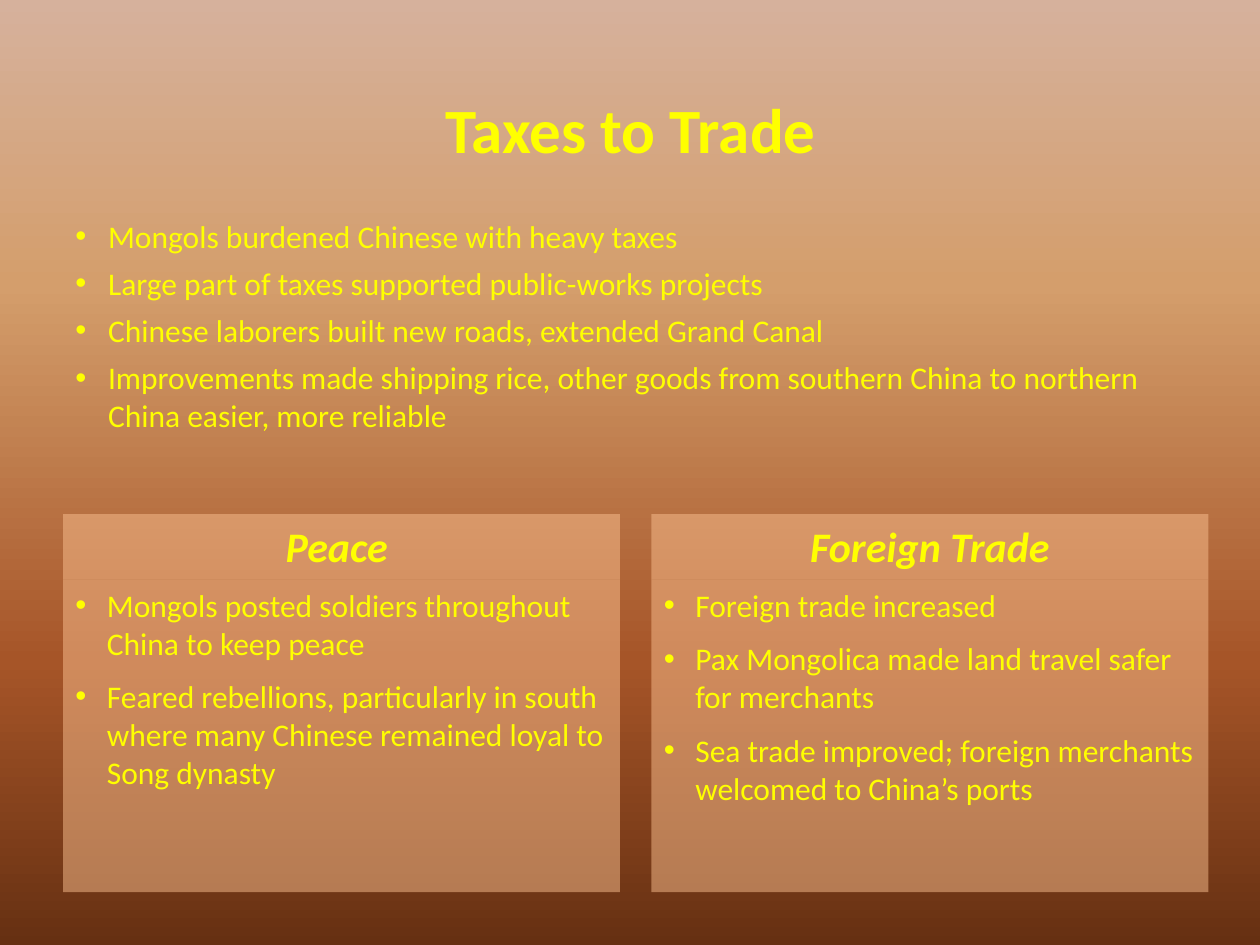
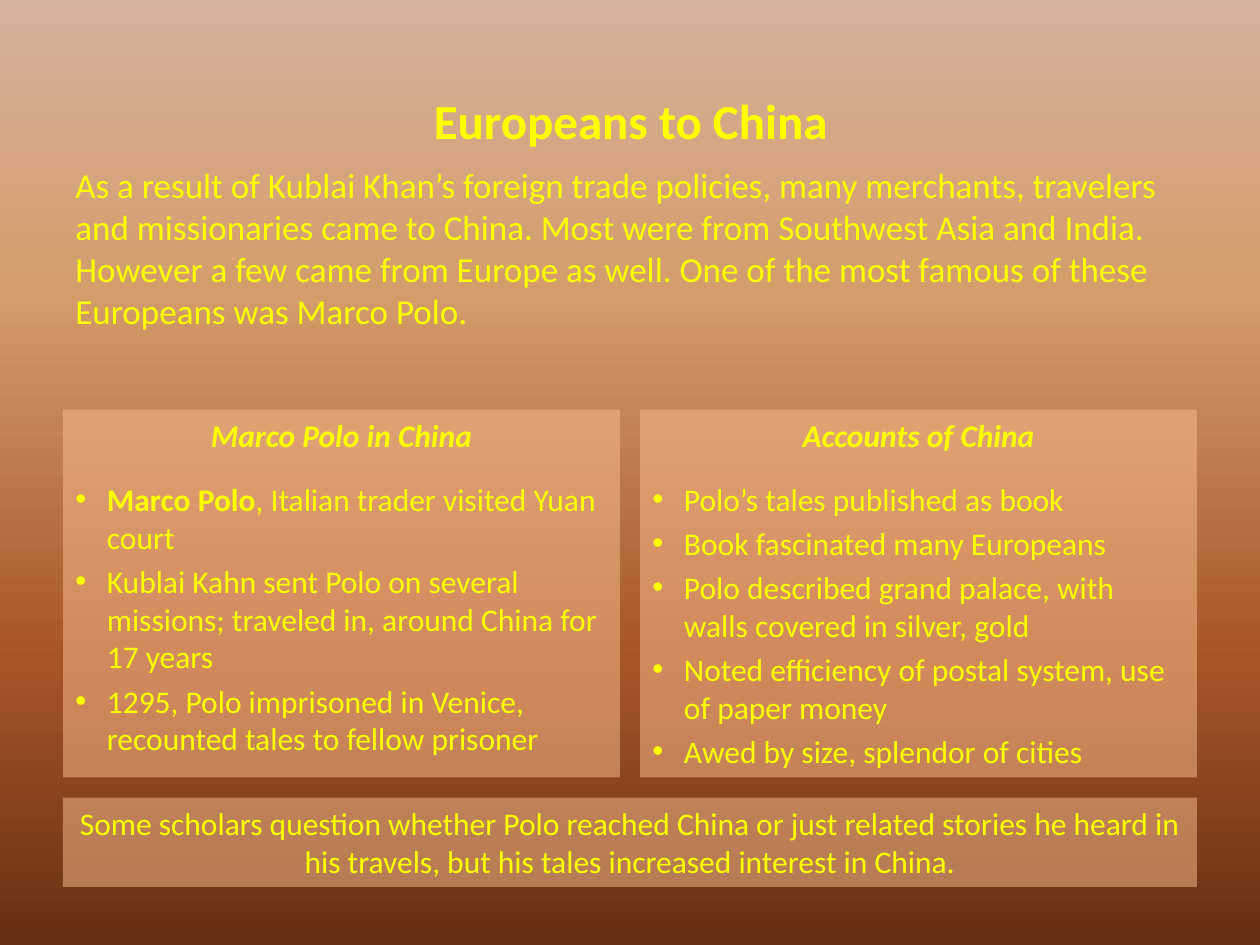
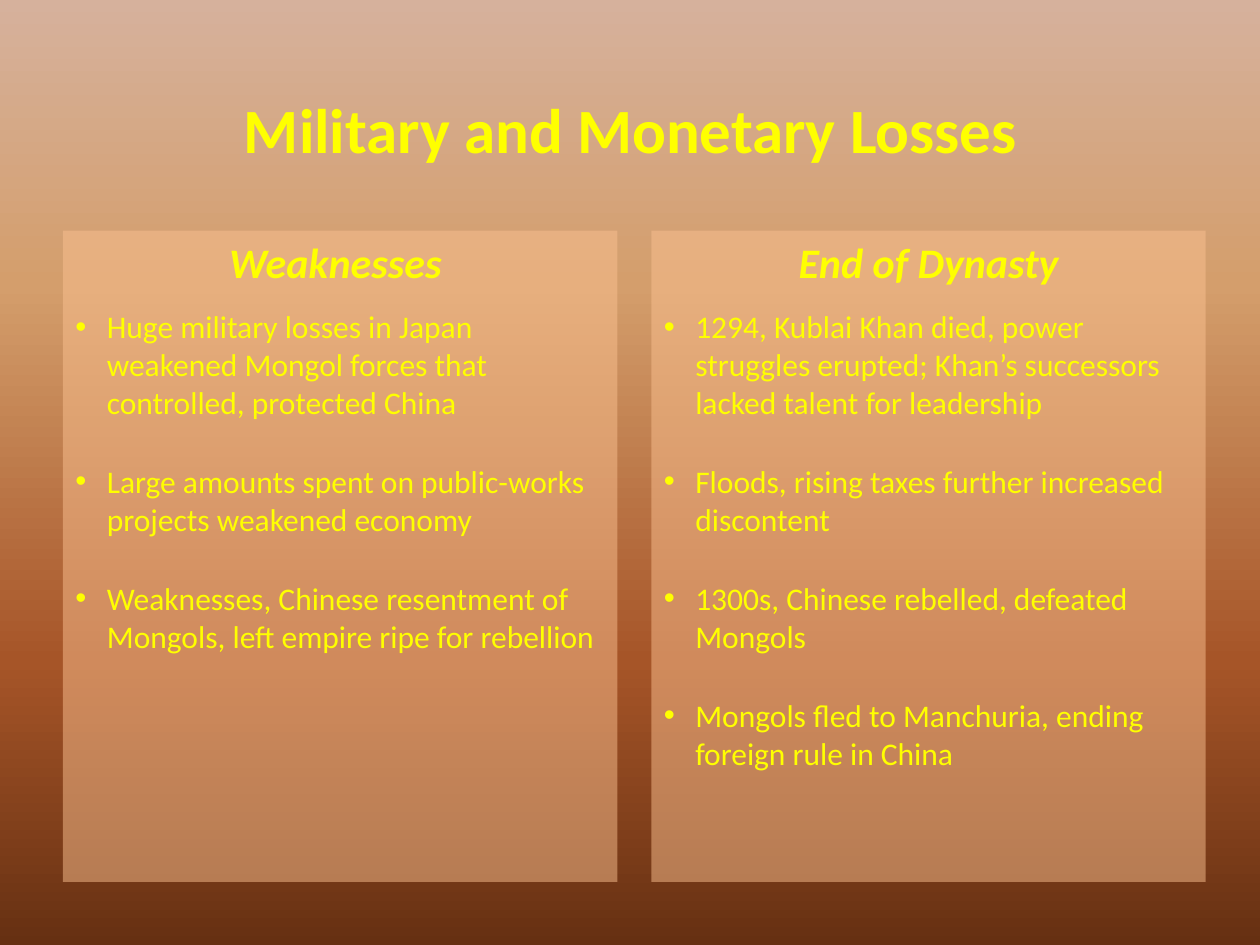
"""Three slides on Mongol rule in China."""
from dataclasses import dataclass

from lxml import etree
from pptx import Presentation
from pptx import util as u
from pptx.dml.color import RGBColor
from pptx.enum import shapes, text
from pptx.oxml.ns import qn


@dataclass(frozen=True)
class Theme:
    """Colours, type sizes and margins shared by the slides."""
    font: str = "Calibri"
    ink: str = "FFFF00"
    panel: str = "FAC090"
    panel_alpha: int = 50
    sky: tuple = ((0, "D6B19C"), (30, "D49E6C"), (70, "A65528"), (100, "663012"))
    title: int = 36
    small_title: int = 28
    heading: int = 24
    lead: int = 20
    body: int = 18
    left: float = 0.5
    width: float = 9
    indent: float = 0.25


T = Theme()


def paint_background(master):
    """Give the master its four-stop vertical gradient."""
    fill = master.background.fill
    fill.gradient()
    fill.gradient_angle = 270
    stops = master.element.find(".//" + qn("a:gsLst"))
    for old in list(stops):
        stops.remove(old)
    for percent, color in T.sky:
        gs = etree.SubElement(stops, qn("a:gs"), pos=str(percent * 1000))
        etree.SubElement(gs, qn("a:srgbClr"), val=color)


def add_bullet(p, indent):
    """Give a paragraph a hanging round bullet."""
    pPr = p._p.get_or_add_pPr()
    pPr.set("marL", str(u.Inches(indent)))
    pPr.set("indent", str(-u.Inches(indent)))
    etree.SubElement(pPr, qn("a:buFont"), typeface="Arial")
    etree.SubElement(pPr, qn("a:buChar"), char="•")


def write(sp, paragraphs, size, gap=0, center=False, bold=False, italic=False, indent=0):
    """Write paragraphs, each a string or a list of (text, bold) runs."""
    tf = sp.text_frame
    tf.word_wrap = True
    tf.vertical_anchor = text.MSO_ANCHOR.TOP
    for i, runs in enumerate(paragraphs):
        p = tf.add_paragraph() if i else tf.paragraphs[0]
        p.alignment = text.PP_ALIGN.CENTER if center else text.PP_ALIGN.LEFT
        p.space_after = u.Pt(gap)
        if indent:
            add_bullet(p, indent)
        for words, strong in [(runs, bold)] if isinstance(runs, str) else runs:
            r = p.add_run()
            r.text = words
            r.font.name = T.font
            r.font.size = u.Pt(size)
            r.font.bold = strong
            r.font.italic = italic
            r.font.color.rgb = RGBColor.from_string(T.ink)


def add_text(s, box, paragraphs, size, **style):
    """Add a text box."""
    sp = s.shapes.add_textbox(*map(u.Inches, box))
    write(sp, paragraphs, size, **style)


def add_panel(s, box, paragraphs, size, **style):
    """Add a translucent rectangle with text."""
    sp = s.shapes.add_shape(shapes.MSO_SHAPE.RECTANGLE, *map(u.Inches, box))
    sp.shadow.inherit = False
    sp.line.fill.background()
    sp.fill.solid()
    sp.fill.fore_color.rgb = RGBColor.from_string(T.panel)
    color = sp._element.spPr.find(".//" + qn("a:srgbClr"))
    etree.SubElement(color, qn("a:alpha"), val=str(T.panel_alpha * 1000))
    write(sp, paragraphs, size, **style)


def add_title(s, words, size=T.title):
    """Add the centred slide title."""
    add_text(s, (0.67, 0.67, 8.67, 0.58), [words], size, center=True, bold=True)


def add_columns(s, columns, top, head_h, body_h, width, right, gap, head_size=T.heading):
    """Add two headed panels of bullets side by side."""
    for left, (heading, bullets) in zip((T.left, right), columns):
        add_panel(s, (left, top + head_h, width, body_h), bullets, T.body,
                  gap=gap, indent=T.indent)
        add_panel(s, (left, top, width, head_h), [heading], head_size,
                  center=True, bold=True, italic=True)


def taxes_slide(s):
    """Build the slide on taxes, peace and trade."""
    add_text(s, (T.left, 1.67, T.width, 1.89), [
        "Mongols burdened Chinese with heavy taxes",
        "Large part of taxes supported public-works projects",
        "Chinese laborers built new roads, extended Grand Canal",
        "Improvements made shipping rice, other goods from southern China "
        "to northern China easier, more reliable",
    ], T.body, gap=5.4, indent=0.26)
    add_columns(s, [
        ("Peace ", [
            "Mongols posted soldiers throughout China to keep peace",
            "Feared rebellions, particularly in south where many Chinese "
            "remained loyal to Song dynasty"]),
        ("Foreign Trade", [
            "Foreign trade increased",
            "Pax Mongolica made land travel safer for merchants",
            "Sea trade improved; foreign merchants welcomed to China’s ports"]),
    ], top=4.08, head_h=0.52, body_h=2.48, width=4.42, right=5.17, gap=9)
    add_title(s, "Taxes to Trade")


def europeans_slide(s):
    """Build the slide on Marco Polo."""
    add_panel(s, (T.left, 6.33, T.width, 0.71), [
        "Some scholars question whether Polo reached China or just related stories "
        "he heard in his travels, but his tales increased interest in China.",
    ], T.body, center=True)
    add_text(s, (T.left, 1.25, T.width, 1.45), [
        "As a result of Kublai Khan’s foreign trade policies, many merchants, travelers "
        "and missionaries came to China. Most were from Southwest Asia and India. "
        "However a few came from Europe as well. One of the most famous of these "
        "Europeans was Marco Polo.",
    ], T.lead)
    add_columns(s, [
        ("Marco Polo in China", [
            [("Marco Polo", True), (", Italian trader visited Yuan court", False)],
            "Kublai Kahn sent Polo on several missions; traveled in, around China "
            "for 17 years",
            "1295, Polo imprisoned in Venice, recounted tales to fellow prisoner"]),
        ("Accounts of China", [
            "Polo’s tales published as book",
            "Book fascinated many Europeans",
            "Polo described grand palace, with walls covered in silver, gold",
            "Noted efficiency of postal system, use of paper money",
            "Awed by size, splendor of cities"]),
    ], top=3.25, head_h=0.51, body_h=2.41, width=4.42, right=5.08, gap=3.6,
        head_size=T.body)
    add_title(s, "Europeans to China", T.small_title)


def losses_slide(s):
    """Build the slide on the fall of the dynasty."""
    add_columns(s, [
        ("Weaknesses ", [
            "Huge military losses in Japan weakened Mongol forces that controlled, "
            "protected China",
            "Large amounts spent on public-works projects weakened economy",
            "Weaknesses, Chinese resentment of Mongols, left empire ripe for rebellion"]),
        ("End of Dynasty", [
            "1294, Kublai Khan died, power struggles erupted; Khan’s successors "
            "lacked talent for leadership",
            "Floods, rising taxes further increased discontent",
            "1300s, Chinese rebelled, defeated Mongols",
            "Mongols fled to Manchuria, ending foreign rule in China"]),
    ], top=1.83, head_h=0.56, body_h=4.61, width=4.4, right=5.17, gap=23.6)
    add_title(s, "Military and Monetary Losses")


def main():
    """Build and save the presentation."""
    prs = Presentation()
    prs.slide_width, prs.slide_height = u.Inches(10), u.Inches(7.5)
    paint_background(prs.slide_master)
    for build in (taxes_slide, europeans_slide, losses_slide):
        build(prs.slides.add_slide(prs.slide_layouts[6]))
    prs.save("out.pptx")


if __name__ == "__main__":
    main()
